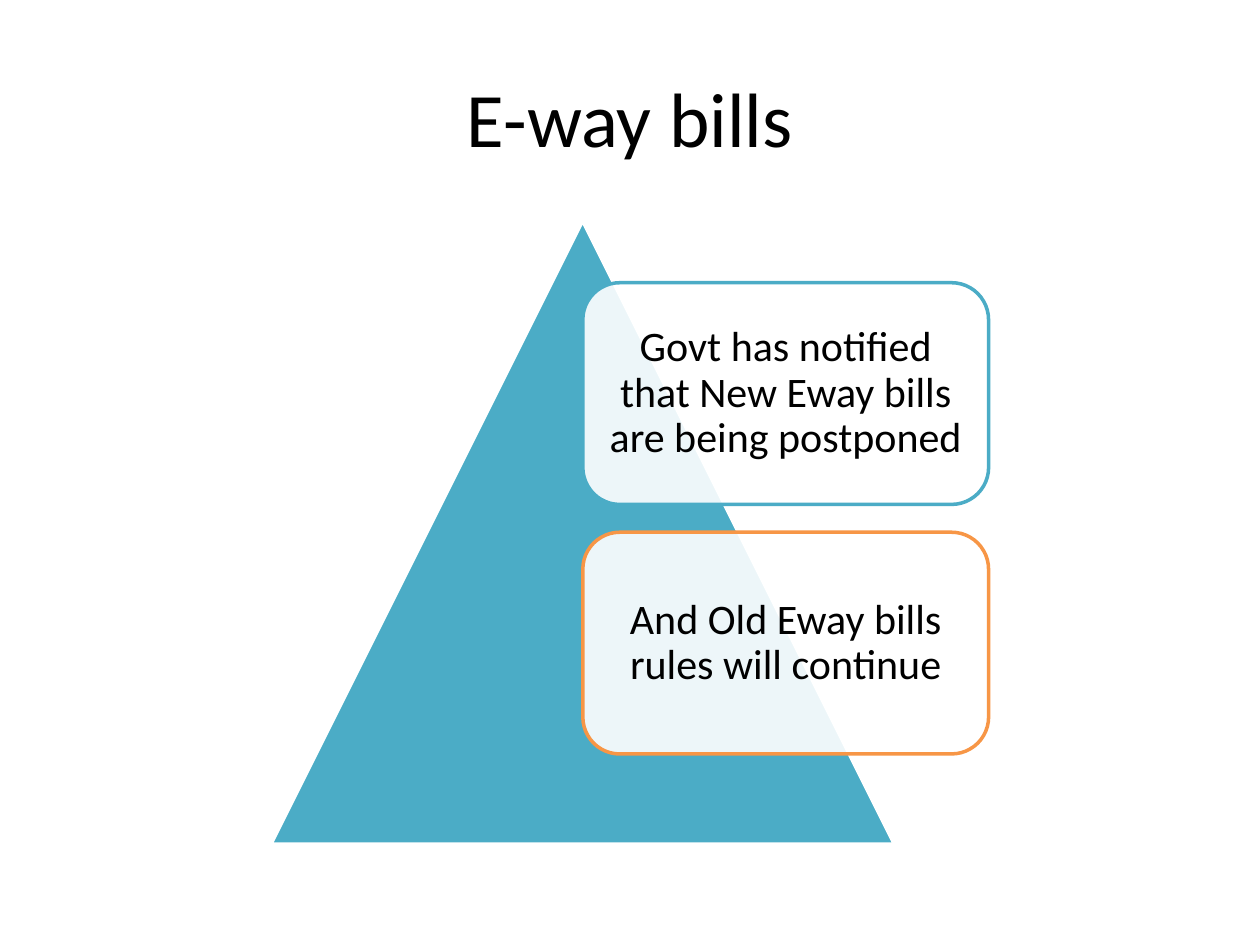
from lxml import etree
from pptx import Presentation
from pptx.dml.color import RGBColor
from pptx.enum import shapes, text
from pptx.oxml import ns
from pptx.util import Cm, Pt

BLACK = RGBColor(0x00, 0x00, 0x00)
WHITE = RGBColor(0xFF, 0xFF, 0xFF)
TEAL = RGBColor(0x4B, 0xAC, 0xC6)
ORANGE = RGBColor(0xF7, 0x96, 0x46)


def write(box, words, size, inset, line_spacing=1.0):
    frame = box.text_frame
    frame_format = {
        "word_wrap": True,
        "vertical_anchor": text.MSO_ANCHOR.MIDDLE,
        "margin_left": inset,
        "margin_right": inset,
        "margin_top": inset,
        "margin_bottom": inset,
    }
    for name, value in frame_format.items():
        setattr(frame, name, value)
    para = frame.paragraphs[0]
    para.alignment = text.PP_ALIGN.CENTER
    para.line_spacing = line_spacing
    span = para.add_run()
    span.text = words
    for name, value in {"name": "Calibri", "size": Pt(size)}.items():
        setattr(span.font, name, value)
    span.font.color.rgb = BLACK


def paint(shape, fill, line):
    shape.shadow.inherit = False
    shape.fill.solid()
    shape.fill.fore_color.rgb = fill
    shape.line.color.rgb = line
    shape.line.width = Pt(2)


deck = Presentation()
deck.slide_width, deck.slide_height = Cm(25.4), Cm(19.05)
page = deck.slides.add_slide(deck.slide_layouts[6])

title = page.shapes.add_textbox(Cm(1.27), Cm(0.76), Cm(22.86), Cm(3.18))
write(title, "E-way bills", 44, Cm(0.13))

triangle = page.shapes.add_shape(
    shapes.MSO_SHAPE.ISOSCELES_TRIANGLE, Cm(5.46), Cm(4.45), Cm(12.57), Cm(12.57))
paint(triangle, TEAL, WHITE)

notices = [
    ("Govt has notified that New Eway bills are being postponed", TEAL),
    ("And Old Eway bills rules will continue", ORANGE),
]
for row, (words, colour) in enumerate(notices):
    notice = page.shapes.add_shape(
        shapes.MSO_SHAPE.ROUNDED_RECTANGLE,
        Cm(11.75), Cm(5.7 + row * 5.03), Cm(8.18), Cm(4.47))
    paint(notice, WHITE, colour)
    fill_colour = notice.fill._xPr.find(ns.qn("a:solidFill"))[0]
    etree.SubElement(fill_colour, ns.qn("a:alpha"), val="90000")
    write(notice, words, 24, Cm(0.25), line_spacing=0.9)

deck.save("out.pptx")
